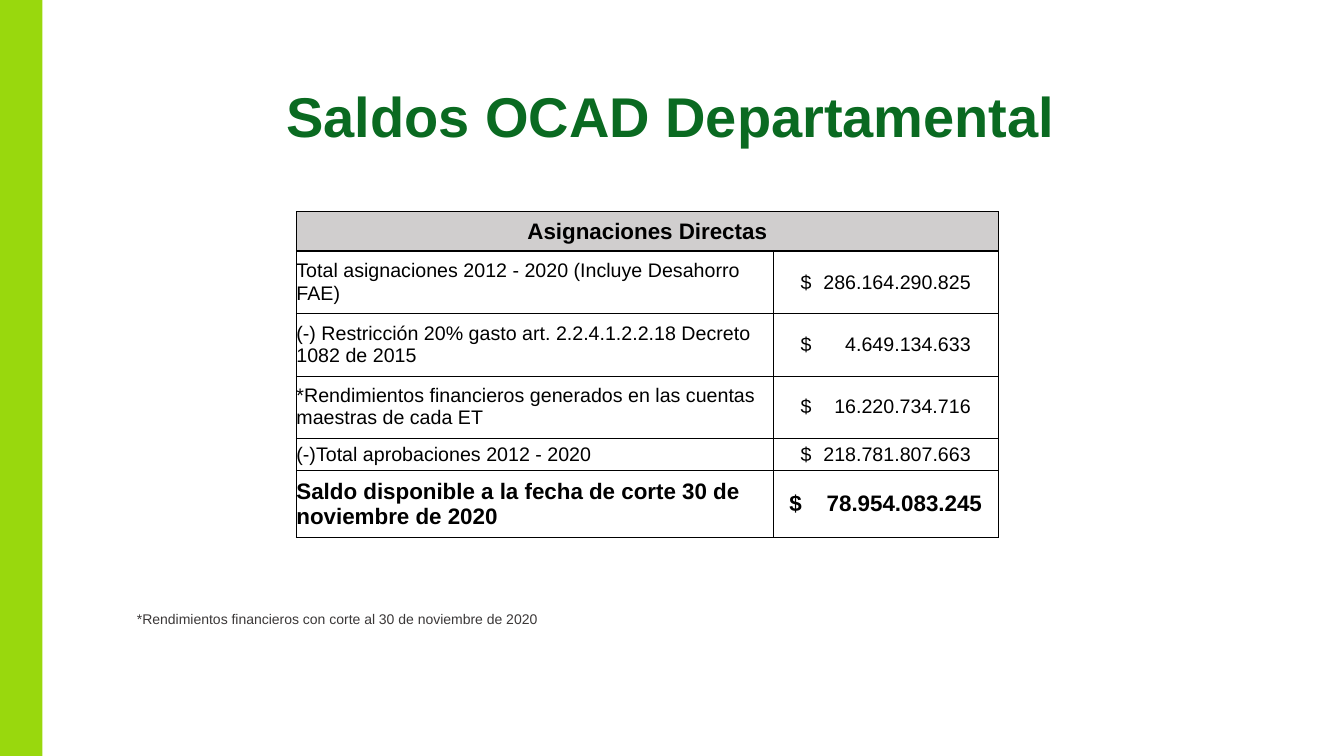
from dataclasses import dataclass

from lxml.etree import SubElement
from pptx import Presentation
from pptx.dml.color import RGBColor
from pptx.enum.shapes import MSO_SHAPE
from pptx.enum.text import MSO_ANCHOR, PP_ALIGN
from pptx.oxml.ns import qn
from pptx.util import Inches, Pt

TITLE = "Saldos OCAD Departamental"
TABLE_HEADING = "Asignaciones Directas"
BALANCES = [
    ("Total asignaciones 2012 - 2020 (Incluye Desahorro FAE)", "286.164.290.825"),
    ("(-) Restricción 20% gasto art. 2.2.4.1.2.2.18 Decreto 1082 de 2015", "4.649.134.633"),
    ("*Rendimientos financieros generados en las cuentas maestras de cada ET", "16.220.734.716"),
    ("(-)Total aprobaciones 2012 - 2020", "218.781.807.663"),
    ("Saldo disponible a la fecha de corte 30 de noviembre de 2020", "78.954.083.245"),
]
FOOTNOTE = "*Rendimientos financieros con corte al 30 de noviembre de 2020"

COLUMN_WIDTHS = (4.73, 2.23)
ROW_HEIGHTS = (0.39, 0.62, 0.62, 0.62, 0.32, 0.66)
AMOUNT_INSET = 0.27
TOTAL_INSET = 0.16


@dataclass(frozen=True)
class Theme:
    font: str = "Arial"
    title: str = "0A6A21"
    note: str = "3B3838"
    text: str = "000000"
    bar: str = "99D80D"
    heading_fill: str = "D0CECE"
    title_size: int = 40
    strong_size: int = 16
    body_size: int = 14
    note_size: int = 10
    outer_line: float = 1
    inner_line: float = 0.5


THEME = Theme()


def format_runs(paragraph, size, color, bold=False):
    for run in paragraph.runs:
        run.font.name = THEME.font
        run.font.size = Pt(size)
        run.font.bold = bold
        run.font.color.rgb = RGBColor.from_string(color)


def set_borders(cell, widths):
    """Draw the left, right, top and bottom borders, in points."""
    properties = cell._tc.get_or_add_tcPr()
    for side, width in zip("LRTB", widths):
        line = SubElement(properties, qn(f"a:ln{side}"), w=str(Pt(width)))
        fill = SubElement(line, qn("a:solidFill"))
        SubElement(fill, qn("a:srgbClr"), val=THEME.text)


def add_right_tab(paragraph, position):
    tabs = SubElement(paragraph._p.get_or_add_pPr(), qn("a:tabLst"))
    SubElement(tabs, qn("a:tab"), pos=str(Inches(position)), algn="r")


def style_cell(cell, row, column):
    cell.margin_left = cell.margin_right = cell.margin_top = cell.margin_bottom = 0
    cell.vertical_anchor = MSO_ANCHOR.MIDDLE
    last_row = len(ROW_HEIGHTS) - 1
    on_edge = (column == 0, column == 1, row <= 1, row in (0, last_row))
    set_borders(cell, [THEME.outer_line if edge else THEME.inner_line for edge in on_edge])
    if row == 0:
        cell.fill.solid()
        cell.fill.fore_color.rgb = RGBColor.from_string(THEME.heading_fill)
    else:
        cell.fill.background()


def add_balance_table(slide):
    frame = slide.shapes.add_table(
        len(ROW_HEIGHTS), len(COLUMN_WIDTHS), Inches(2.94), Inches(2.1),
        Inches(sum(COLUMN_WIDTHS)), Inches(sum(ROW_HEIGHTS)))
    table = frame.table
    table.first_row = table.horz_banding = False
    for column, width in zip(table.columns, COLUMN_WIDTHS):
        column.width = Inches(width)
    for row, height in zip(table.rows, ROW_HEIGHTS):
        row.height = Inches(height)

    heading = table.cell(0, 0)
    heading.merge(table.cell(0, 1))
    heading.text_frame.text = TABLE_HEADING
    heading.text_frame.paragraphs[0].alignment = PP_ALIGN.CENTER
    for row, (label, amount) in enumerate(BALANCES, start=1):
        table.cell(row, 0).text_frame.text = label
        table.cell(row, 1).text_frame.text = f"$\t{amount}"

    total_row = len(BALANCES)
    for row in range(len(ROW_HEIGHTS)):
        strong = row in (0, total_row)
        size = THEME.strong_size if strong else THEME.body_size
        for column in range(len(COLUMN_WIDTHS)):
            cell = table.cell(row, column)
            style_cell(cell, row, column)
            paragraph = cell.text_frame.paragraphs[0]
            if row > 0 and column == 1:
                inset = TOTAL_INSET if row == total_row else AMOUNT_INSET
                cell.margin_left = Inches(inset)
                add_right_tab(paragraph, COLUMN_WIDTHS[1] - 2 * inset)
            format_runs(paragraph, size, THEME.text, strong)


def main():
    presentation = Presentation()
    presentation.slide_width = Inches(13.33)
    presentation.slide_height = Inches(7.5)
    slide = presentation.slides.add_slide(presentation.slide_layouts[5])

    title = slide.shapes.title
    title.left, title.top = Inches(1.26), Inches(0.76)
    title.width, title.height = Inches(10.78), Inches(0.77)
    title.text_frame.text = TITLE
    title.text_frame.vertical_anchor = MSO_ANCHOR.TOP
    title_paragraph = title.text_frame.paragraphs[0]
    title_paragraph.alignment = PP_ALIGN.CENTER
    format_runs(title_paragraph, THEME.title_size, THEME.title, bold=True)

    footnote = slide.shapes.add_textbox(Inches(1.26), Inches(6.01), Inches(4.65), Inches(0.27))
    footnote.text_frame.word_wrap = True
    footnote.text_frame.text = FOOTNOTE
    format_runs(footnote.text_frame.paragraphs[0], THEME.note_size, THEME.note)

    bar = slide.shapes.add_shape(
        MSO_SHAPE.RECTANGLE, 0, 0, Inches(0.42), presentation.slide_height)
    bar.shadow.inherit = False
    bar.fill.solid()
    bar.fill.fore_color.rgb = RGBColor.from_string(THEME.bar)
    bar.line.fill.background()

    add_balance_table(slide)
    presentation.save("out.pptx")


if __name__ == "__main__":
    main()
